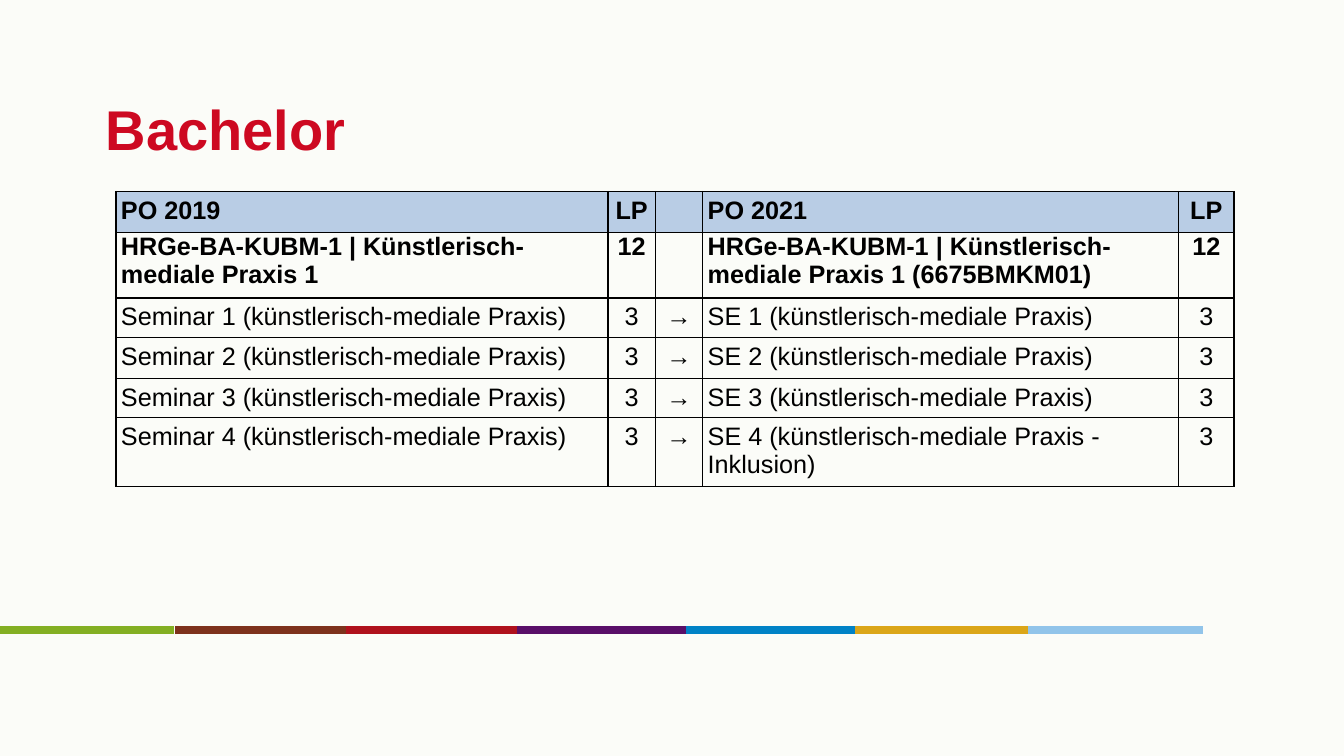
"""Build the Bachelor slide that maps PO 2019 modules to PO 2021."""
from dataclasses import dataclass

import lxml.etree
import pptx
import pptx.dml.color
import pptx.enum.shapes
import pptx.enum.text
import pptx.oxml.ns
import pptx.util

Inches = pptx.util.Inches
Pt = pptx.util.Pt
Align = pptx.enum.text.PP_ALIGN


@dataclass(frozen=True)
class Theme:
    """Colours and type sizes of the slide."""
    font: str = "Arial"
    title_size: int = 40
    table_size: int = 18
    stripe_width: float = 5.5
    border_width: float = 1
    background: str = "FBFCF8"
    title: str = "CD0921"
    text: str = "000000"
    border: str = "000000"
    header: str = "B9CDE5"


THEME = Theme()
STRIPES = [
    (0, "83AF23"), (1.74, "7D321D"), (3.43, "AF111D"), (5.13, "590F68"),
    (6.8, "0082C6"), (8.48, "DBA619"), (10.2, "91C4EA"),
]
STRIPE_LENGTH = 1.73
STRIPE_TOP = 6.25
COLUMN_WIDTHS = [4.88, 0.47, 0.47, 4.72, 0.55]
ROW_HEIGHTS = [0.39, 0.65, 0.39, 0.41, 0.39, 0.68]
CENTRED_COLUMNS = {1, 2, 4}
MODULE = "HRGe-BA-KUBM-1 | Künstlerisch-mediale Praxis 1"
PRACTICE = "künstlerisch-mediale Praxis"
ROWS = [
    ["PO 2019", "LP", "", "PO 2021", "LP"],
    [MODULE, "12", "", f"{MODULE} (6675BMKM01)", "12"],
    *[[f"Seminar {number} ({PRACTICE})", "3", "→",
       f"SE {number} ({PRACTICE}{suffix})", "3"]
      for number, suffix in enumerate(["", "", "", " - Inklusion"], 1)],
]


def rgb(value):
    """Return a colour from its hex value."""
    return pptx.dml.color.RGBColor.from_string(value)


def style_font(font, size, colour, bold):
    """Apply the typeface, size, colour and weight to a font."""
    font.name = THEME.font
    font.size = Pt(size)
    font.bold = bold
    font.color.rgb = rgb(colour)


def write_text(frame, text, size, colour, bold, align):
    """Write one styled run into the first paragraph of a text frame."""
    para = frame.paragraphs[0]
    para.alignment = align
    span = para.add_run()
    span.text = text
    style_font(span.font, size, colour, bold)


def add_title(page, text):
    """Place and fill the title placeholder."""
    box = page.shapes.title
    box.left, box.top = Inches(1), Inches(0.65)
    box.width, box.height = Inches(11.33), Inches(1.25)
    frame = box.text_frame
    frame.word_wrap = True
    frame.vertical_anchor = pptx.enum.text.MSO_ANCHOR.MIDDLE
    frame.margin_left = frame.margin_right = Inches(0.05)
    frame.margin_top = frame.margin_bottom = Inches(0.05)
    write_text(frame, text, THEME.title_size, THEME.title, True, Align.LEFT)


def add_stripe(page, left, colour):
    """Draw one segment of the coloured footer band."""
    stripe = page.shapes.add_connector(
        pptx.enum.shapes.MSO_CONNECTOR.STRAIGHT,
        Inches(left), Inches(STRIPE_TOP),
        Inches(left + STRIPE_LENGTH), Inches(STRIPE_TOP))
    stripe.line.color.rgb = rgb(colour)
    stripe.line.width = Pt(THEME.stripe_width)
    properties = stripe.element.find(pptx.oxml.ns.qn("p:spPr"))
    lxml.etree.SubElement(properties, pptx.oxml.ns.qn("a:effectLst"))


def add_borders(cell):
    """Give a table cell a solid line on all four sides."""
    qn = pptx.oxml.ns.qn
    properties = cell._tc.get_or_add_tcPr()
    for side in ("lnL", "lnR", "lnT", "lnB"):
        line = lxml.etree.SubElement(
            properties, qn(f"a:{side}"), w=str(Pt(THEME.border_width)))
        fill = lxml.etree.SubElement(line, qn("a:solidFill"))
        lxml.etree.SubElement(fill, qn("a:srgbClr"), val=THEME.border)


def fill_cell(cell, text, row, column):
    """Write and format one table cell."""
    add_borders(cell)
    if row == 0:
        cell.fill.solid()
        cell.fill.fore_color.rgb = rgb(THEME.header)
    else:
        cell.fill.background()
    cell.margin_left = cell.margin_right = Inches(0.05)
    cell.margin_top = cell.margin_bottom = Inches(0 if row == 1 else 0.05)
    if text:
        align = Align.CENTER if column in CENTRED_COLUMNS else Align.LEFT
        write_text(cell.text_frame, text, THEME.table_size, THEME.text,
                   row < 2, align)


def add_module_table(page):
    """Add the table comparing both examination regulations."""
    table = page.shapes.add_table(
        len(ROWS), len(COLUMN_WIDTHS), Inches(1.15), Inches(1.9),
        Inches(sum(COLUMN_WIDTHS)), Inches(sum(ROW_HEIGHTS))).table
    table.first_row = table.horz_banding = False
    for column, width in zip(table.columns, COLUMN_WIDTHS):
        column.width = Inches(width)
    for row, height in zip(table.rows, ROW_HEIGHTS):
        row.height = Inches(height)
    for row, texts in enumerate(ROWS):
        for column, text in enumerate(texts):
            fill_cell(table.cell(row, column), text, row, column)


def main():
    """Create and save the deck."""
    deck = pptx.Presentation()
    deck.slide_width, deck.slide_height = Inches(13.33), Inches(7.5)
    page = deck.slides.add_slide(deck.slide_layouts.get_by_name("Title Only"))
    page.background.fill.solid()
    page.background.fill.fore_color.rgb = rgb(THEME.background)
    for left, colour in STRIPES:
        add_stripe(page, left, colour)
    add_title(page, "Bachelor")
    add_module_table(page)
    deck.save("out.pptx")


if __name__ == "__main__":
    main()
